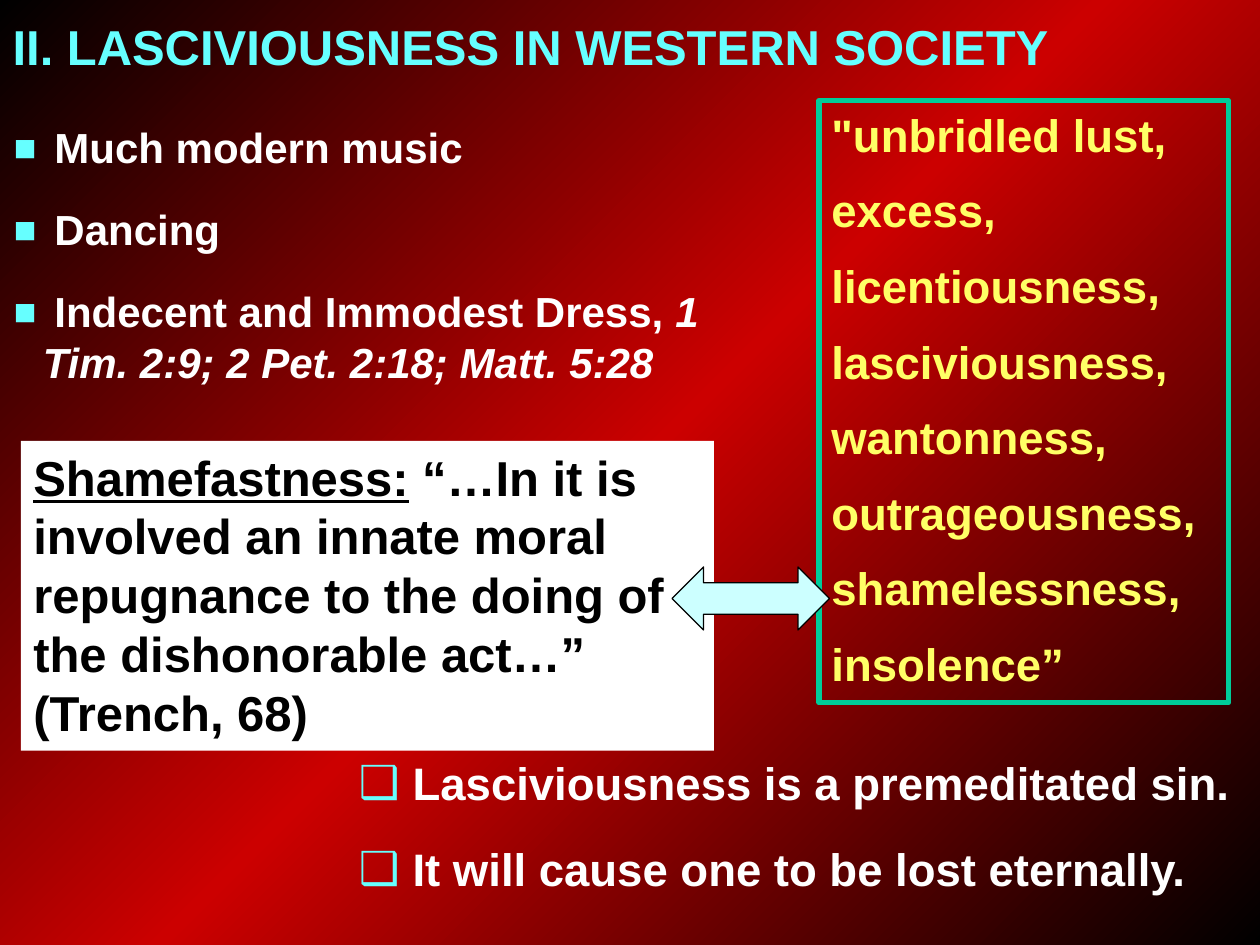
from dataclasses import dataclass

from lxml import etree
from pptx import Presentation
from pptx.dml.color import RGBColor
from pptx.enum.shapes import MSO_SHAPE
from pptx.enum.text import MSO_ANCHOR, PP_ALIGN
from pptx.oxml.ns import qn
from pptx.util import Pt

RECTANGLE = MSO_SHAPE.RECTANGLE
DOUBLE_ARROW = MSO_SHAPE.LEFT_RIGHT_ARROW
TOP = MSO_ANCHOR.TOP
LEFT = PP_ALIGN.LEFT


@dataclass(frozen=True)
class Theme:
    font: str = "Arial"
    black: str = "000000"
    red: str = "CC0000"
    white: str = "FFFFFF"
    cyan: str = "66FFFF"
    pale_cyan: str = "CCFFFF"
    yellow: str = "FFFF66"
    green: str = "00CC99"
    heading_size: int = 28
    point_size: int = 26
    list_size: int = 24


@dataclass(frozen=True)
class Bullet:
    mark: str
    indent: float
    percent: int = 100


class SlideBuilder:
    def __init__(self, page, theme):
        self.page = page
        self.theme = theme

    def background(self):
        """Diagonal gradient: black, red, black."""
        fill = self.page.background.fill
        fill.gradient()
        # The public angle runs counter-clockwise.
        fill.gradient_angle = 315
        stops = next(self.page.element.iter(qn("a:gsLst")))
        for stop in list(stops):
            stops.remove(stop)
        theme = self.theme
        for position, color in ((0, theme.black), (50, theme.red), (100, theme.black)):
            stop = etree.SubElement(stops, qn("a:gs"), pos=str(position * 1000))
            etree.SubElement(stop, qn("a:srgbClr"), val=color)

    def place(self, box, left, top, width, height):
        box.left, box.top = Pt(left), Pt(top)
        box.width, box.height = Pt(width), Pt(height)

    def add_text(self, box, paragraphs, size, color, space_after=0, bullet=None):
        """Each paragraph is a list of (text, style) pairs; style is "", "italic" or "underline"."""
        frame = box.text_frame
        frame.word_wrap = True
        frame.vertical_anchor = TOP
        for index, spans in enumerate(paragraphs):
            para = frame.add_paragraph() if index else frame.paragraphs[0]
            para.alignment = LEFT
            para.space_before = Pt(0)
            para.space_after = Pt(space_after)
            if bullet:
                self.add_bullet(para, bullet)
            for text, style in spans:
                span = para.add_run()
                span.text = text
                font = span.font
                font.name, font.size, font.bold = self.theme.font, Pt(size), True
                font.color.rgb = RGBColor.from_string(color)
                if style:
                    setattr(font, style, True)

    def add_bullet(self, para, bullet):
        props = para._p.get_or_add_pPr()
        props.set("marL", str(Pt(bullet.indent)))
        props.set("indent", str(-Pt(bullet.indent)))
        color = etree.SubElement(props, qn("a:buClr"))
        etree.SubElement(color, qn("a:srgbClr"), val=self.theme.cyan)
        etree.SubElement(props, qn("a:buSzPct"), val=str(bullet.percent * 1000))
        etree.SubElement(props, qn("a:buFont"), typeface=self.theme.font)
        etree.SubElement(props, qn("a:buChar"), char=bullet.mark)

    def title(self, text, *bounds):
        box = self.page.shapes.title
        self.place(box, *bounds)
        self.add_text(box, [[(text, "")]], self.theme.heading_size, self.theme.cyan)

    def body(self, paragraphs, bullet, *bounds):
        box = self.page.placeholders[1]
        self.place(box, *bounds)
        self.add_text(box, paragraphs, self.theme.list_size, self.theme.white, 18, bullet)

    def text_list(self, lines, bullet, *bounds):
        box = self.page.shapes.add_textbox(*map(Pt, bounds))
        paragraphs = [[(line, "")] for line in lines]
        self.add_text(box, paragraphs, self.theme.point_size, self.theme.white, 18, bullet)

    def shape(self, kind, *bounds, fill=None, line=None, line_width=0):
        shape = self.page.shapes.add_shape(kind, *map(Pt, bounds))
        shape.shadow.inherit = False
        if fill:
            shape.fill.solid()
            shape.fill.fore_color.rgb = RGBColor.from_string(fill)
        else:
            shape.fill.background()
        if line:
            shape.line.color.rgb = RGBColor.from_string(line)
            shape.line.width = Pt(line_width)
        else:
            shape.line.fill.background()
        return shape


def main():
    deck = Presentation()
    deck.slide_width, deck.slide_height = Pt(720), Pt(540)
    theme = Theme()
    page = deck.slides.add_slide(deck.slide_layouts[1])
    builder = SlideBuilder(page, theme)

    builder.background()
    builder.title("II. LASCIVIOUSNESS IN WESTERN SOCIETY", 0, 6, 720, 41)

    meanings = builder.shape(RECTANGLE, 468, 57.6, 234, 344, line=theme.green, line_width=3)
    words = ['"unbridled lust,', "excess,", "licentiousness,", "lasciviousness,",
             "wantonness,", "outrageousness,", "shamelessness,", "insolence”"]
    builder.add_text(meanings, [[(word, "")] for word in words],
                     theme.point_size, theme.yellow, 12)

    builder.text_list([" Lasciviousness is a premeditated sin.",
                       " It will cause one to be lost eternally."],
                      Bullet("❑", 23.5), 198, 428, 522, 88.5)

    builder.body([[(" Much modern music", "")],
                  [(" Dancing\u00a0", "")],
                  [(" Indecent and Immodest Dress, ", ""),
                   ("1 Tim. 2:9; 2 Pet. 2:18; Matt. 5:28", "italic")]],
                 Bullet("▪", 17.25, 175), 0, 66, 444, 160)

    quote = builder.shape(RECTANGLE, 12, 252, 396, 177, fill=theme.white)
    builder.add_text(quote, [[("Shamefastness:", "underline"),
                              (" “…In it is involved an innate moral repugnance to the doing of "
                               "the dishonorable act…” (Trench, 68)", "")]],
                     theme.heading_size, theme.black)

    builder.shape(DOUBLE_ARROW, 384, 324, 90, 36,
                  fill=theme.pale_cyan, line=theme.black, line_width=0.75)

    deck.save("out.pptx")


if __name__ == "__main__":
    main()
